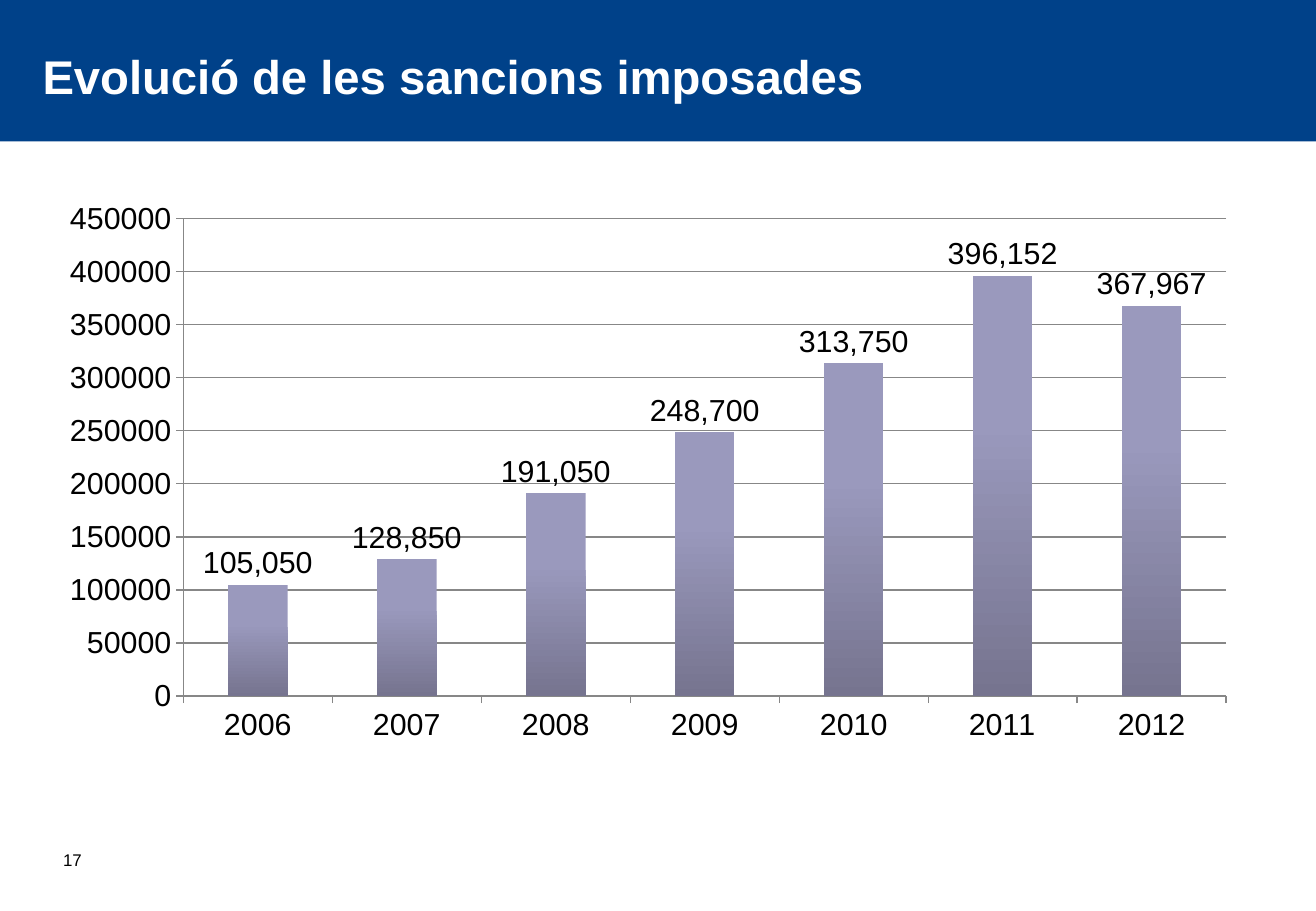
from lxml import etree
from pptx import Presentation
from pptx.chart.data import CategoryChartData
from pptx.dml.color import RGBColor
from pptx.enum.chart import XL_CHART_TYPE, XL_LABEL_POSITION, XL_TICK_MARK
from pptx.enum.shapes import MSO_SHAPE
from pptx.enum.text import MSO_ANCHOR
from pptx.oxml import parse_xml
from pptx.oxml.ns import nsdecls
from pptx.util import Cm, Pt

COLUMN_CLUSTERED = XL_CHART_TYPE.COLUMN_CLUSTERED
OUTSIDE_END = XL_LABEL_POSITION.OUTSIDE_END
TICK_OUTSIDE = XL_TICK_MARK.OUTSIDE
RECTANGLE = MSO_SHAPE.RECTANGLE
MIDDLE = MSO_ANCHOR.MIDDLE

FONT = "Arial"
BLUE, WHITE, BLACK, GRAY = "004189", "FFFFFF", "000000", "878787"
BAR_TOP, BAR_BOTTOM = "9A99BD", "76748F"
PLOT_LAYOUT = {"x": 0.107, "y": 0.067, "w": 0.883, "h": 0.791}
SANCTIONS = {
    "2006": 105050,
    "2007": 128850,
    "2008": 191050,
    "2009": 248700,
    "2010": 313750,
    "2011": 396152,
    "2012": 367967,
}


def color(hex_string):
    return RGBColor.from_string(hex_string)


def style_font(font, size, hex_string, bold=False):
    font.name = FONT
    font.size = Pt(size)
    font.bold = bold
    font.color.rgb = color(hex_string)


def add_band(slide, width, height):
    band = slide.shapes.add_shape(RECTANGLE, 0, 0, width, height)
    band.shadow.inherit = False
    band.fill.solid()
    band.fill.fore_color.rgb = color(BLUE)
    band.line.fill.background()


def add_text(slide, text, left, top, width, height, size, hex_string, bold=False):
    text_frame = slide.shapes.add_textbox(left, top, width, height).text_frame
    text_frame.word_wrap = True
    text_frame.vertical_anchor = MIDDLE
    text_frame.text = text
    style_font(text_frame.paragraphs[0].runs[0].font, size, hex_string, bold)


def set_plot_layout(chart):
    """Fix the inner plot area as fractions of the chart frame."""
    plot_area = chart.plots[0]._element.getparent()
    for old_layout in plot_area.findall("{*}layout"):
        plot_area.remove(old_layout)
    layout = parse_xml(
        f'<c:layout {nsdecls("c")}><c:manualLayout><c:layoutTarget val="inner"/>'
        '<c:xMode val="edge"/><c:yMode val="edge"/></c:manualLayout></c:layout>'
    )
    namespace = etree.QName(layout).namespace
    for name, value in PLOT_LAYOUT.items():
        etree.SubElement(layout[0], f"{{{namespace}}}{name}", val=str(value))
    plot_area.insert(0, layout)


def style_axes(chart):
    value_axis = chart.value_axis
    value_axis.minimum_scale = 0
    value_axis.maximum_scale = 450000
    value_axis.major_unit = 50000
    value_axis.has_major_gridlines = True
    value_axis.major_gridlines.format.line.color.rgb = color(GRAY)
    value_axis.tick_labels.number_format = "General"
    value_axis.tick_labels.number_format_is_linked = False
    for axis in (chart.category_axis, value_axis):
        axis.major_tick_mark = TICK_OUTSIDE
        axis.format.line.color.rgb = color(GRAY)
        style_font(axis.tick_labels.font, 18, BLACK)


def style_bars(plot):
    plot.gap_width = 150
    plot.vary_by_categories = False
    fill = plot.series[0].format.fill
    fill.gradient()
    fill.gradient_angle = 270
    stops = zip(fill.gradient_stops, (0.35, 1), (BAR_TOP, BAR_BOTTOM))
    for stop, position, hex_string in stops:
        stop.position = position
        stop.color.rgb = color(hex_string)

    plot.has_data_labels = True
    labels = plot.data_labels
    labels.show_value = True
    labels.number_format = "#,##0"
    labels.number_format_is_linked = False
    labels.position = OUTSIDE_END
    style_font(labels.font, 18, BLACK)


def add_sanctions_chart(slide, left, top, width, height):
    data = CategoryChartData()
    data.categories = list(SANCTIONS)
    data.add_series("Series 1", list(SANCTIONS.values()))
    chart = slide.shapes.add_chart(
        COLUMN_CLUSTERED, left, top, width, height, data
    ).chart
    chart.has_legend = False
    chart.has_title = False
    style_font(chart.font, 18, BLACK)
    set_plot_layout(chart)
    style_axes(chart)
    style_bars(chart.plots[0])


def main():
    presentation = Presentation()
    presentation.slide_width = Cm(27.51)
    presentation.slide_height = Cm(19.05)
    slide = presentation.slides.add_slide(presentation.slide_layouts[6])

    add_band(slide, presentation.slide_width, Cm(2.96))
    add_text(slide, "17", Cm(1.07), Cm(17.35), Cm(5.74), Cm(1.27), 10, BLACK)
    add_text(slide, "Evolució de les sancions imposades",
             Cm(0.64), Cm(0.64), Cm(19.25), Cm(1.9), 28, WHITE, bold=True)
    add_sanctions_chart(slide, Cm(1.19), Cm(3.73), Cm(24.69), Cm(12.62))

    presentation.save("out.pptx")


if __name__ == "__main__":
    main()
